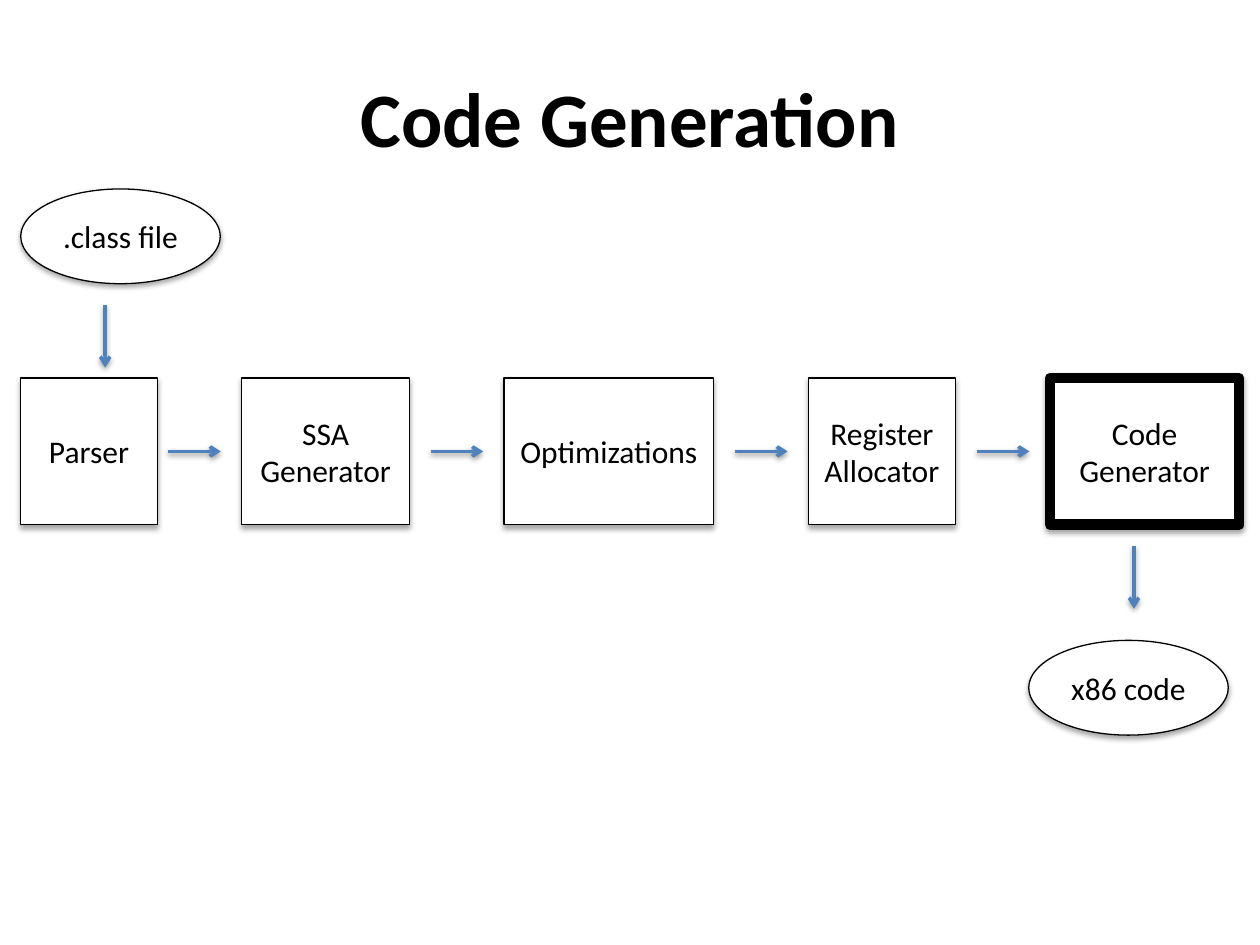
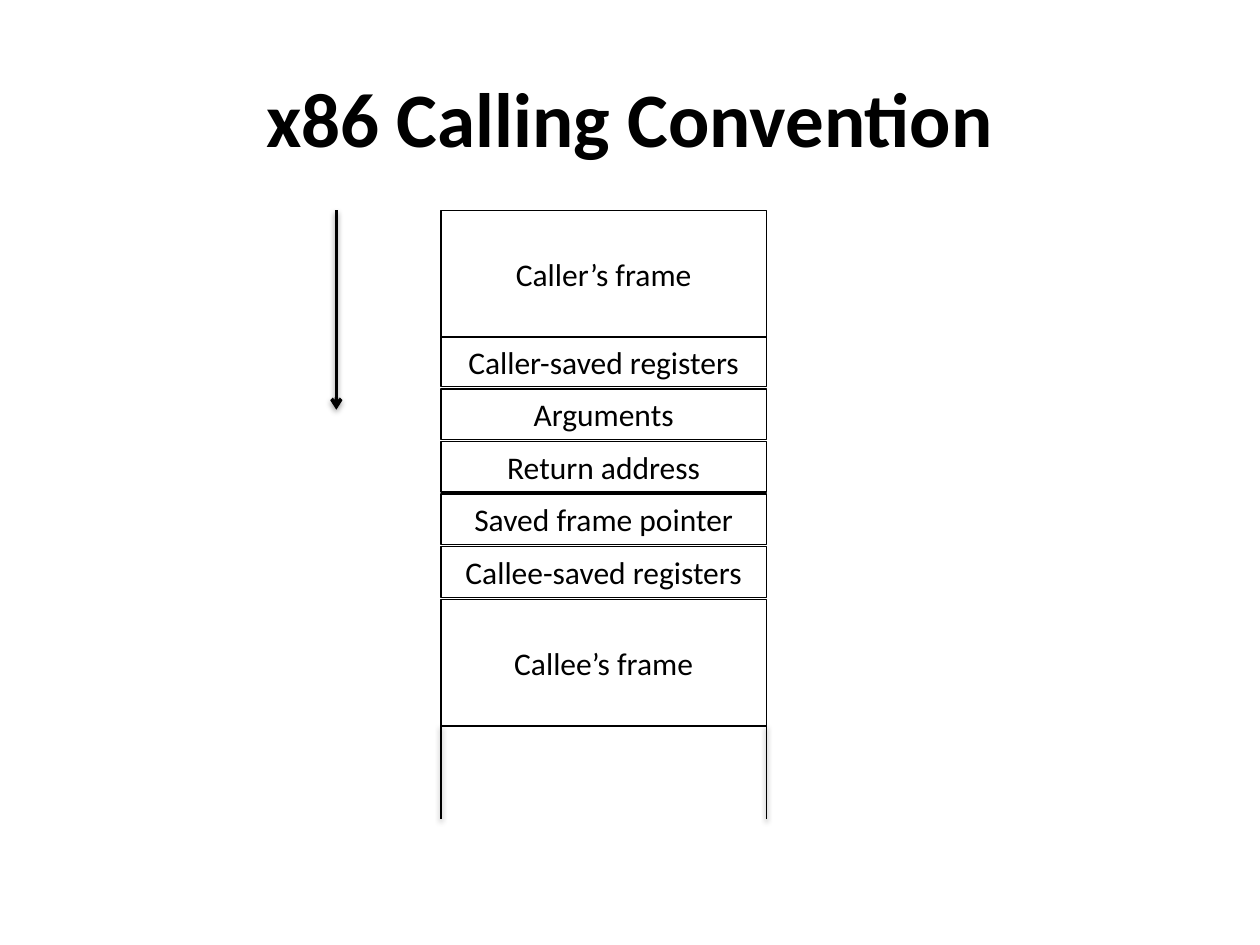
from pptx import Presentation
from pptx.dml.color import RGBColor
from pptx.enum.shapes import MSO_CONNECTOR, MSO_SHAPE
from pptx.enum.text import MSO_ANCHOR, PP_ALIGN
from pptx.oxml import parse_xml
from pptx.oxml.ns import nsdecls
from pptx.util import Cm, Pt

RECTANGLE, ELLIPSE = MSO_SHAPE.RECTANGLE, MSO_SHAPE.OVAL
STRAIGHT = MSO_CONNECTOR.STRAIGHT
MIDDLE, CENTER = MSO_ANCHOR.MIDDLE, PP_ALIGN.CENTER

rgb = RGBColor.from_string
BLACK, WHITE, BLUE = "000000", "FFFFFF", "4F81BD"
FONT = "Calibri"
SHADOW = (
    f'<a:effectLst {nsdecls("a")}>'
    '<a:outerShdw blurRad="40000" dist="{distance}" dir="5400000" rotWithShape="0">'
    '<a:srgbClr val="000000"><a:alpha val="{alpha}"/></a:srgbClr>'
    '</a:outerShdw></a:effectLst>'
)
ARROWHEAD = f'<a:tailEnd {nsdecls("a")} type="arrow"/>'


def add_text(page, text, left, top, width, height, shape=None, size=18,
             bold=False, fill=None, line=0.75, shadow=False):
    """Add centred text, in a text box or inside an outlined shape."""
    place = Cm(left), Cm(top), Cm(width), Cm(height)
    if shape is None:
        box = page.shapes.add_textbox(*place)
    else:
        box = page.shapes.add_shape(shape, *place)
        box.line.color.rgb = rgb(BLACK)
        box.line.width = Pt(line)
        if fill:
            box.fill.solid()
            box.fill.fore_color.rgb = rgb(fill)
        else:
            box.fill.background()
        if shadow:
            box._element.spPr.append(parse_xml(SHADOW.format(distance=23000, alpha=35000)))
        else:
            box.shadow.inherit = False
    frame = box.text_frame
    frame.word_wrap = True
    frame.vertical_anchor = MIDDLE
    para = frame.paragraphs[0]
    para.alignment = CENTER
    span = para.add_run()
    span.text = text
    span.font.name = FONT
    span.font.size = Pt(size)
    span.font.bold = bold
    span.font.color.rgb = rgb(BLACK)


def add_line(page, x1, y1, x2, y2, color=BLUE, width=2, arrow=True):
    """Add a straight line with a soft shadow."""
    link = page.shapes.add_connector(STRAIGHT, Cm(x1), Cm(y1), Cm(x2), Cm(y2))
    link.line.color.rgb = rgb(color)
    link.line.width = Pt(width)
    if arrow:
        link.line._get_or_add_ln().append(parse_xml(ARROWHEAD))
    link._element.spPr.append(parse_xml(SHADOW.format(distance=20000, alpha=38000)))


deck = Presentation()
deck.slide_width, deck.slide_height = Cm(25.4), Cm(19.05)

# Titled pages
pages = []
for title in ("Code Generation", "x86 Calling Convention"):
    page = deck.slides.add_slide(deck.slide_layouts[6])
    add_text(page, title, 1.27, 0.76, 22.86, 3.18, size=44, bold=True)
    pages.append(page)
pipeline, convention = pages

# Compiler stages: name, left, width, outline
stages = [
    ("Parser", 0.42, 2.75, 0.75),
    ("SSA Generator", 4.87, 3.39, 0.75),
    ("Optimizations", 10.16, 4.23, 0.75),
    ("Register Allocator", 16.3, 2.96, 0.75),
    ("Code Generator", 21.17, 3.81, 6),
]
for name, left, width, outline in stages:
    add_text(pipeline, name, left, 7.62, width, 2.96, shape=RECTANGLE,
             fill=WHITE, line=outline, shadow=True)

# Arrows that end just before each following stage
for name, left, width, outline in stages[1:]:
    add_line(pipeline, left - 1.48, 9.1, left - 0.42, 9.1)

# Input and output files
for name, left, top in ((".class file", 0.42, 3.81), ("x86 code", 20.74, 12.91)):
    add_text(pipeline, name, left, top, 4.02, 1.91, shape=ELLIPSE,
             fill=WHITE, shadow=True)
for x, y in ((2.12, 6.14), (22.86, 11.0)):
    add_line(pipeline, x, y, x, y + 1.27)

# Stack frames: name, height, step to the next frame
STACK_LEFT, STACK_WIDTH, STACK_TOP = 8.89, 6.56, 4.24
TALL, SHORT = (2.56, 2.54), (1.02, 1.06)
frames = [
    ("Caller’s frame", TALL),
    ("Caller-saved registers", SHORT),
    ("Arguments", SHORT),
    ("Return address", SHORT),
    ("Saved frame pointer", SHORT),
    ("Callee-saved registers", SHORT),
    ("Callee’s frame", TALL),
]
top = STACK_TOP
for name, (height, step) in frames:
    add_text(convention, name, STACK_LEFT, top, STACK_WIDTH, height, shape=RECTANGLE)
    top += step

# Direction of stack growth and the open end of the stack
add_line(convention, 6.78, STACK_TOP, 6.78, 8.26, color=BLACK)
for x in (STACK_LEFT, STACK_LEFT + STACK_WIDTH):
    add_line(convention, x, top, x, top + 1.9, color=BLACK, width=1, arrow=False)

deck.save("out.pptx")
